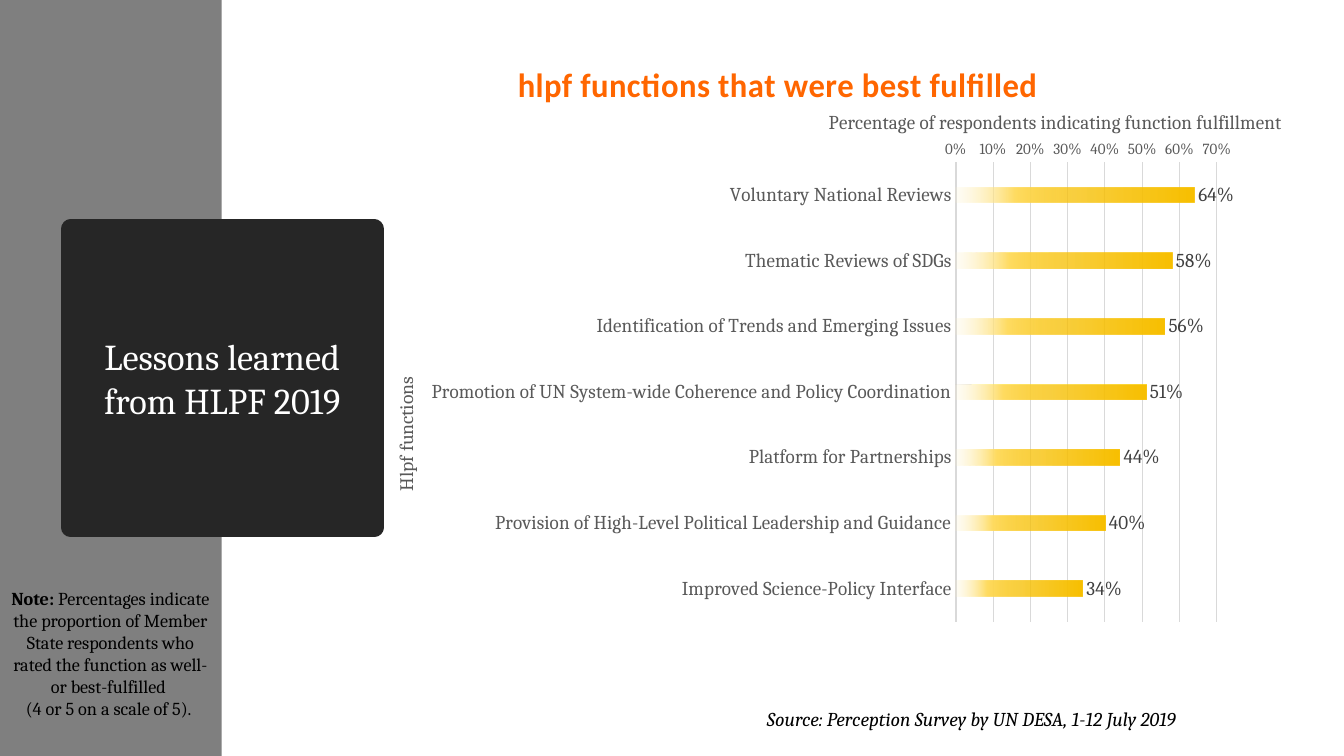
from lxml.etree import SubElement
from pptx import Presentation
from pptx.chart.data import CategoryChartData
from pptx.dml.color import RGBColor
from pptx.enum.chart import XL_CHART_TYPE, XL_LABEL_POSITION, XL_TICK_MARK
from pptx.enum.shapes import MSO_SHAPE
from pptx.enum.text import MSO_ANCHOR, PP_ALIGN
from pptx.oxml.ns import qn
from pptx.util import Cm, Pt

WHITE = RGBColor(0xFF, 0xFF, 0xFF)
BLACK = RGBColor(0, 0, 0)
CHARCOAL = RGBColor(0x26, 0x26, 0x26)
LABEL_GRAY = RGBColor(0x40, 0x40, 0x40)
AXIS_GRAY = RGBColor(0x59, 0x59, 0x59)
PANEL_GRAY = RGBColor(0x7F, 0x7F, 0x7F)
LINE_GRAY = RGBColor(0xD9, 0xD9, 0xD9)
ORANGE = RGBColor(0xFF, 0x66, 0x00)
GOLD = RGBColor(0xF8, 0xC0, 0x00)
LIGHT_GOLD = RGBColor(0xFF, 0xDC, 0x62)
PALE_GOLD = RGBColor(0xFF, 0xF3, 0xCB)

# Position, colour and opacity, in percent, from bar end to bar start
BAR_GRADIENT = [(0, GOLD, 100), (51, GOLD, 75), (75, LIGHT_GOLD, 100), (100, PALE_GOLD, 15)]

FULFILLMENT = {
    "Voluntary National Reviews": 0.64,
    "Thematic Reviews of SDGs": 0.58,
    "Identification of Trends and Emerging Issues": 0.56,
    "Promotion of UN System-wide Coherence and Policy Coordination": 0.51,
    "Platform for Partnerships": 0.44,
    "Provision of High-Level Political Leadership and Guidance": 0.4,
    "Improved Science-Policy Interface": 0.34,
}


def set_font(font, size, color, name="Cambria", bold=False, italic=False):
    font.size = Pt(size)
    font.color.rgb = color
    font.name = name
    font.bold = bold
    font.italic = italic


def set_layout(element, after=None, **fractions):
    """Place a chart part by fractions of the chart's width and height."""
    for old in element.findall(qn("c:layout")):
        element.remove(old)
    layout = element.makeelement(qn("c:layout"))
    if after is None:
        element.insert(0, layout)
    else:
        after.addnext(layout)
    manual = SubElement(layout, qn("c:manualLayout"))
    if "w" in fractions:
        SubElement(manual, qn("c:layoutTarget"), val="inner")
    for side in "xy":
        SubElement(manual, qn(f"c:{side}Mode"), val="edge")
    for key, value in fractions.items():
        SubElement(manual, qn(f"c:{key}"), val=str(value))


def fill_gradient(series, stops, angle):
    properties = series._element.get_or_add_spPr()
    gradient = properties.makeelement(qn("a:gradFill"), rotWithShape="1")
    properties.insert(0, gradient)
    stop_list = SubElement(gradient, qn("a:gsLst"))
    for position, color, opacity in stops:
        stop = SubElement(stop_list, qn("a:gs"), pos=str(position * 1000))
        tint = SubElement(stop, qn("a:srgbClr"), val=str(color))
        if opacity < 100:
            SubElement(tint, qn("a:alpha"), val=str(opacity * 1000))
    SubElement(gradient, qn("a:lin"), ang=str(angle * 60000), scaled="0")


class SlideBuilder:
    def __init__(self, slide):
        self.slide = slide

    def panel(self, left, top, width, height, color):
        panel = self.slide.shapes.add_shape(
            MSO_SHAPE.RECTANGLE, Cm(left), Cm(top), Cm(width), Cm(height))
        panel.shadow.inherit = False
        panel.fill.solid()
        panel.fill.fore_color.rgb = color
        panel.line.fill.background()

    def title(self, text, left, top, width, height):
        title = self.slide.shapes.title
        title.left, title.top = Cm(left), Cm(top)
        title.width, title.height = Cm(width), Cm(height)
        title.fill.solid()
        title.fill.fore_color.rgb = CHARCOAL
        title.line.color.rgb = CHARCOAL
        title.line.width = Pt(13.75)
        SubElement(title.line._get_or_add_ln(), qn("a:round"))
        frame = title.text_frame
        frame.text = text
        frame.word_wrap = True
        frame.vertical_anchor = MSO_ANCHOR.MIDDLE
        para = frame.paragraphs[0]
        para.alignment = PP_ALIGN.CENTER
        para.line_spacing = 1.0
        set_font(para.font, 26, WHITE)
        # Bring the title in front of the side panel
        self.slide.shapes._spTree.append(title._element)

    def text(self, paragraphs, left, top, width, height, size,
             align=PP_ALIGN.LEFT, italic=False):
        """Add a text box; each paragraph is a list of (text, bold) spans."""
        box = self.slide.shapes.add_textbox(Cm(left), Cm(top), Cm(width), Cm(height))
        frame = box.text_frame
        frame.word_wrap = True
        for index, spans in enumerate(paragraphs):
            para = frame.add_paragraph() if index else frame.paragraphs[0]
            para.alignment = align
            set_font(para.font, size, BLACK, italic=italic)
            for text, bold in spans:
                span = para.add_run()
                span.text = text
                span.font.bold = bold

    def chart_title(self, title, text, size, color, x, y, name="Cambria", bold=False):
        frame = title.text_frame
        frame.text = text
        set_font(frame.paragraphs[0].font, size, color, name, bold)
        element = title._element
        set_layout(element, after=element.find(qn("c:tx")), x=x, y=y)

    def bar_chart(self, values, left, top, width, height):
        data = CategoryChartData(number_format="0%")
        data.categories = list(values)
        data.add_series("Series 1", list(values.values()))
        chart = self.slide.shapes.add_chart(
            XL_CHART_TYPE.BAR_CLUSTERED, Cm(left), Cm(top), Cm(width), Cm(height), data).chart
        set_font(chart.font, 10, BLACK)
        chart.has_legend = False
        chart.has_title = True
        self.chart_title(chart.chart_title, "hlpf functions that were best fulfilled",
                         24, ORANGE, 0.14, 0, "Calibri", True)
        heading = chart.chart_title.text_frame.paragraphs[0]
        heading.font._element.set("spc", "30")

        plot = chart.plots[0]
        plot.vary_by_categories = False
        plot.gap_width = 326
        plot.overlap = -58
        fill_gradient(plot.series[0], BAR_GRADIENT, 180)
        plot.has_data_labels = True
        labels = plot.data_labels
        labels.show_value = True
        labels.position = XL_LABEL_POSITION.OUTSIDE_END
        labels.number_format = "0%"
        labels.number_format_is_linked = False
        set_font(labels.font, 14, LABEL_GRAY)

        functions, percent = chart.category_axis, chart.value_axis
        for axis, size in ((functions, 14), (percent, 11)):
            axis.major_tick_mark = axis.minor_tick_mark = XL_TICK_MARK.NONE
            set_font(axis.tick_labels.font, size, AXIS_GRAY)
        functions.reverse_order = True
        functions.format.line.color.rgb = LINE_GRAY
        functions.format.line.width = Pt(1.5)
        self.chart_title(functions.axis_title, "Hlpf functions", 14, AXIS_GRAY, 0, 0.5)
        body = functions.axis_title.text_frame._txBody.find(qn("a:bodyPr"))
        body.set("rot", "-5400000")
        body.set("vert", "horz")

        percent.minimum_scale, percent.maximum_scale, percent.major_unit = 0, 0.7, 0.1
        percent.tick_labels.number_format = "0%"
        percent.tick_labels.number_format_is_linked = False
        percent.format.line.fill.background()
        percent.major_gridlines.format.line.color.rgb = LINE_GRAY
        percent.major_gridlines.format.line.width = Pt(0.75)
        self.chart_title(percent.axis_title,
                         "Percentage of respondents indicating function fulfillment",
                         14, AXIS_GRAY, 0.5, 0.08)
        plot_area = chart._chartSpace.find(".//" + qn("c:plotArea"))
        set_layout(plot_area, x=0.65, y=0.17, w=0.3, h=0.73)


def main():
    deck = Presentation()
    deck.slide_width, deck.slide_height = Cm(33.87), Cm(19.05)
    builder = SlideBuilder(deck.slides.add_slide(deck.slide_layouts[5]))
    builder.panel(0, 0, 5.59, 19.05, PANEL_GRAY)
    builder.title("Lessons learned from HLPF 2019", 1.78, 5.77, 7.65, 7.52)
    note = ("Percentages indicate the proportion of Member State respondents "
            "who rated the function as well- or best-fulfilled ")
    builder.text([[("Note: ", True), (note, False)], [("(4 or 5 on a scale of 5). ", False)]],
                 0, 14.68, 5.56, 4.37, 13, PP_ALIGN.CENTER)
    builder.text([[("Source: Perception Survey by UN DESA, 1-12 July 2019", False)]],
                 19.08, 17.7, 12.95, 0.86, 14, italic=True)
    builder.bar_chart(FULFILLMENT, 9.83, 1.4, 22.58, 15.85)
    deck.save("out.pptx")


if __name__ == "__main__":
    main()
